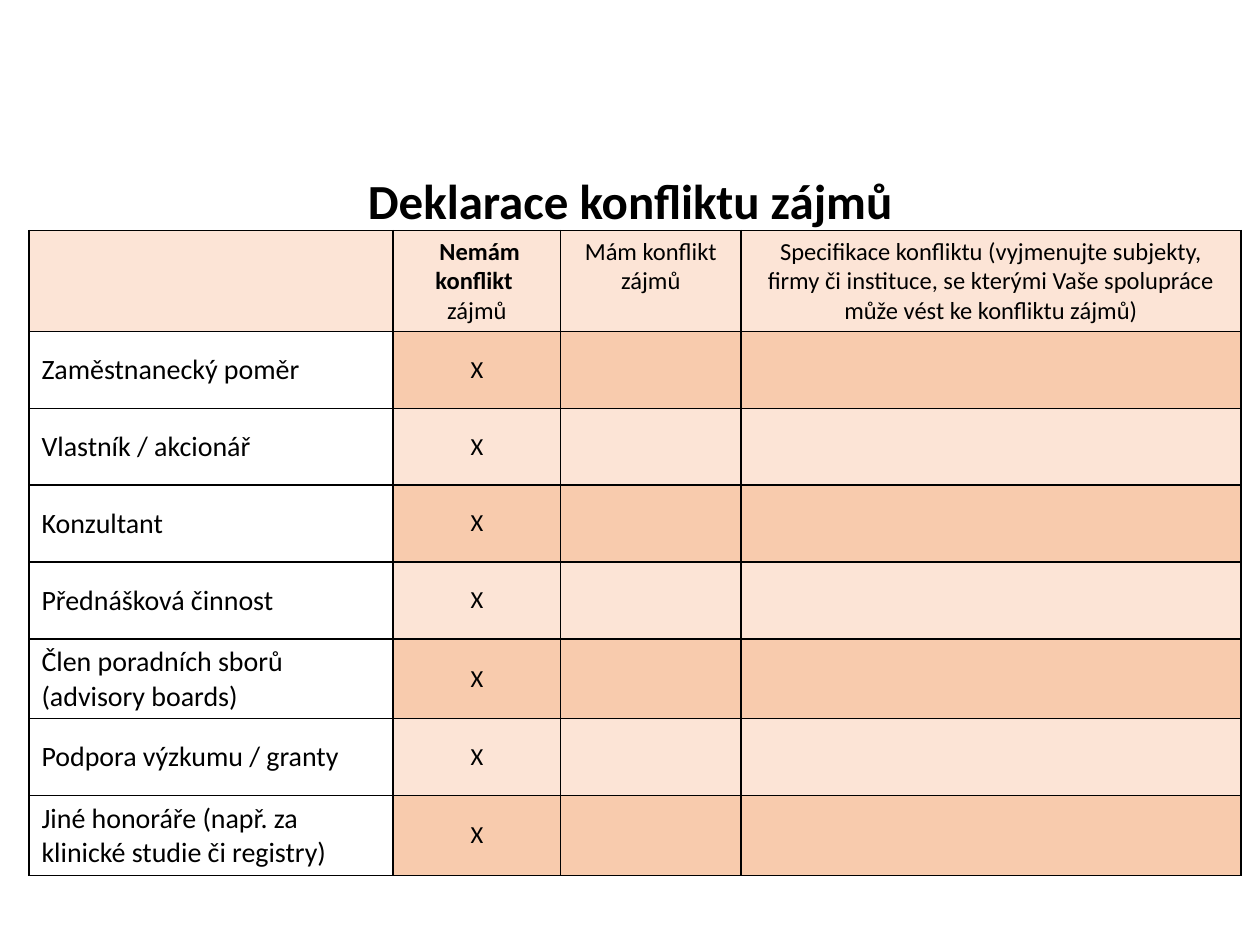
import pptx
import pptx.dml.color
import pptx.enum.text
import pptx.oxml
import pptx.oxml.ns
import pptx.util
from pptx.util import Inches

RGBColor = pptx.dml.color.RGBColor
BLACK = RGBColor(0x00, 0x00, 0x00)
WHITE = RGBColor(0xFF, 0xFF, 0xFF)
LIGHT_PEACH = RGBColor(0xFC, 0xE4, 0xD6)
PEACH = RGBColor(0xF8, 0xCB, 0xAD)

FONT = "Calibri"
CENTER = pptx.enum.text.PP_ALIGN.CENTER
LEFT = pptx.enum.text.PP_ALIGN.LEFT
TOP = pptx.enum.text.MSO_ANCHOR.TOP
MIDDLE = pptx.enum.text.MSO_ANCHOR.MIDDLE

COLUMN_WIDTHS = [2.89, 1.33, 1.43, 3.97]
ROW_HEIGHT = 0.61

# Each header is a list of paragraphs, each paragraph a list of (text, bold) runs.
HEADERS = [
    [],
    [[(" ", False), ("Nemám konflikt ", True)], [("zájmů", False)]],
    [[("Mám konflikt zájmů", False)]],
    [[("Specifikace konfliktu (vyjmenujte subjekty, firmy či instituce, "
       "se kterými Vaše spolupráce může vést ke konfliktu zájmů)", False)]],
]
RELATIONSHIPS = [
    "Zaměstnanecký poměr",
    "Vlastník / akcionář",
    "Konzultant",
    "Přednášková činnost",
    "Člen poradních sborů (advisory boards)",
    "Podpora výzkumu / granty",
    "Jiné honoráře (např. za klinické studie či registry)",
]


def write_paragraphs(tf, paragraphs, size, align):
    for i, runs in enumerate(paragraphs):
        p = tf.paragraphs[0] if i == 0 else tf.add_paragraph()
        p.alignment = align
        for text, bold in runs:
            r = p.add_run()
            r.text = text
            r.font.name = FONT
            r.font.size = pptx.util.Pt(size)
            r.font.bold = bold
            r.font.color.rgb = BLACK


def add_borders(cell):
    """Draw a 1 pt black line on all four sides, ahead of the cell's fill."""
    tc_pr = cell._tc.get_or_add_tcPr()
    for i, side in enumerate(("lnL", "lnR", "lnT", "lnB")):
        line = pptx.oxml.parse_xml(
            f'<a:{side} {pptx.oxml.ns.nsdecls("a")} w="12700"><a:solidFill>'
            f'<a:srgbClr val="{BLACK}"/></a:solidFill></a:{side}>')
        tc_pr.insert(i, line)


def format_cell(cell, fill, paragraphs=(), size=14, align=CENTER, anchor=MIDDLE):
    cell.fill.solid()
    cell.fill.fore_color.rgb = fill
    cell.vertical_anchor = anchor
    write_paragraphs(cell.text_frame, paragraphs, size, align)
    add_borders(cell)


def set_title(s, text):
    sp = s.shapes.title
    sp.left, sp.top = Inches(2.79), Inches(1.3)
    sp.width, sp.height = Inches(4.42), Inches(0.57)
    tf = sp.text_frame
    tf.word_wrap = False
    tf.auto_size = pptx.enum.text.MSO_AUTO_SIZE.SHAPE_TO_FIT_TEXT
    tf.vertical_anchor = TOP
    write_paragraphs(tf, [[(text, True)]], 28, CENTER)


def add_declaration_table(s):
    n_rows = len(RELATIONSHIPS) + 1
    table = s.shapes.add_table(
        n_rows, len(COLUMN_WIDTHS), Inches(0.23), Inches(1.83),
        Inches(sum(COLUMN_WIDTHS)), Inches(n_rows * ROW_HEIGHT)).table
    table.first_row = table.horz_banding = False
    for column, width in zip(table.columns, COLUMN_WIDTHS):
        column.width = Inches(width)
    for row in table.rows:
        row.height = Inches(ROW_HEIGHT)

    for col, header in enumerate(HEADERS):
        format_cell(table.cell(0, col), LIGHT_PEACH, header, anchor=TOP)
    for row, label in enumerate(RELATIONSHIPS, start=1):
        band = PEACH if row % 2 else LIGHT_PEACH
        format_cell(table.cell(row, 0), WHITE, [[(label, False)]], 16, LEFT)
        format_cell(table.cell(row, 1), band, [[("X", False)]])
        for col in (2, 3):
            format_cell(table.cell(row, col), band)


def main():
    prs = pptx.Presentation()
    prs.slide_width, prs.slide_height = Inches(10), Inches(7.5)
    s = prs.slides.add_slide(prs.slide_layouts[5])
    set_title(s, "Deklarace konfliktu zájmů")
    add_declaration_table(s)
    prs.save("out.pptx")


if __name__ == "__main__":
    main()
